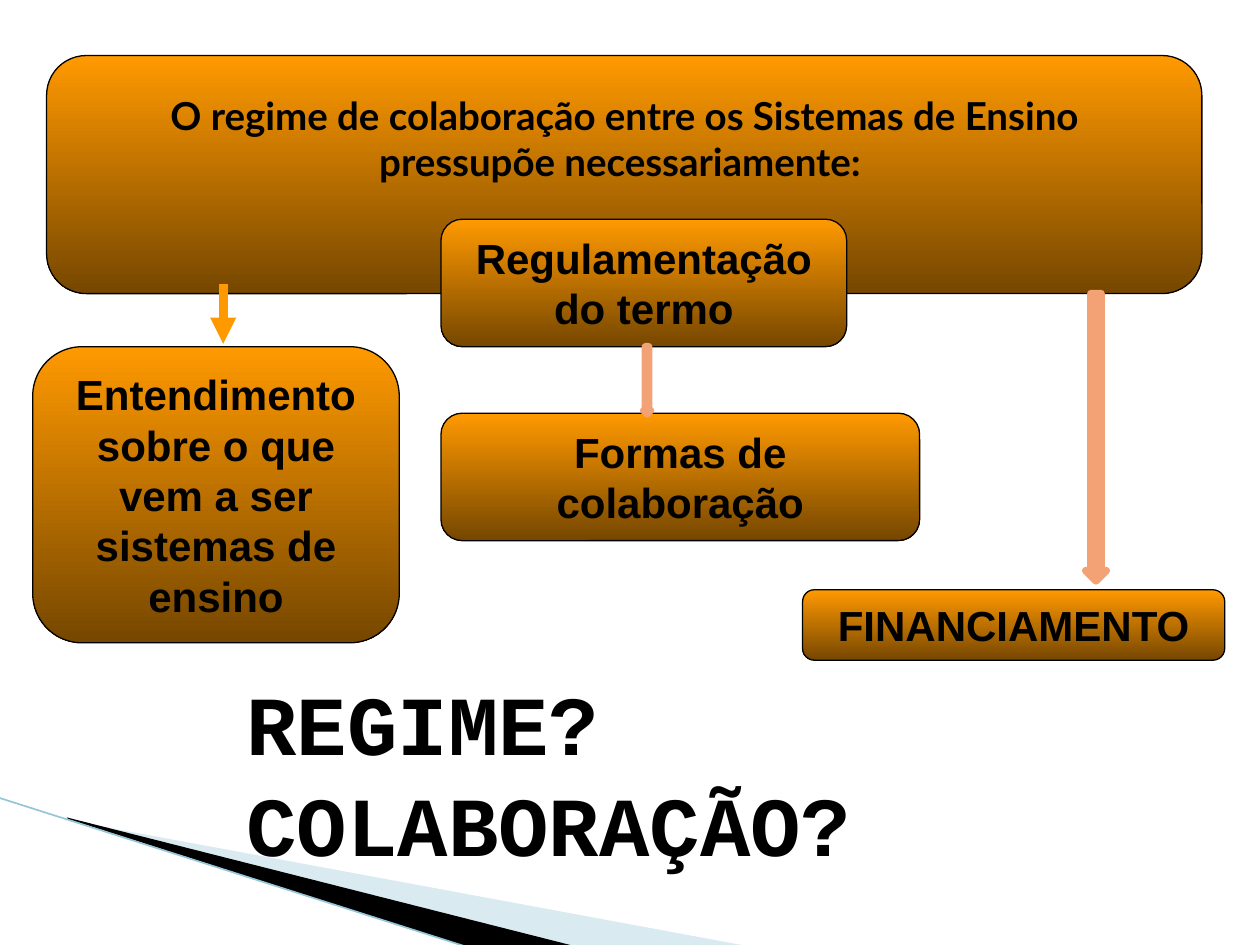
from lxml import etree
from pptx import Presentation
from pptx.dml.color import RGBColor
from pptx.enum import shapes, text
from pptx.oxml import ns
from pptx.util import Cm, Pt

ORANGE = RGBColor(0xFF, 0x99, 0x00)
BROWN = RGBColor(0x76, 0x47, 0x00)
BLACK = RGBColor(0x00, 0x00, 0x00)
SALMON = RGBColor(0xF3, 0xA2, 0x76)
PALE_BLUE = RGBColor(0xA0, 0xCB, 0xDC)
EDGE_BLUE = RGBColor(0x97, 0xC5, 0xD8)


def write(holder, words, font="Arial", size=24, align=text.PP_ALIGN.CENTER,
          anchor=text.MSO_ANCHOR.MIDDLE):
    frame = holder.text_frame
    frame.word_wrap = True
    frame.auto_size = text.MSO_AUTO_SIZE.SHAPE_TO_FIT_TEXT
    frame.vertical_anchor = anchor
    paragraph = frame.paragraphs[0]
    paragraph.alignment = align
    run = paragraph.add_run()
    run.text = words
    run.font.name = font
    run.font.size = Pt(size)
    run.font.bold = True
    run.font.color.rgb = BLACK


def draw_line(start, end, color, width):
    line = slide.shapes.add_connector(
        shapes.MSO_CONNECTOR.STRAIGHT, *map(Cm, start + end))
    line.line.color.rgb = color
    line.line.width = Pt(width)
    etree.SubElement(line._element.spPr, ns.qn("a:effectLst"))
    return line


prs = Presentation()
prs.slide_width, prs.slide_height = Cm(25.4), Cm(19.05)
slide = prs.slides.add_slide(prs.slide_layouts[6])

# Corner decoration: pale wedge, black wedge, thin edge
wedges = [
    ([(1.4, 16.54), (15.11, 19.08), (11.58, 19.08), (1.4, 16.51)], PALE_BLUE, 40),
    ([(1.35, 16.48), (11.61, 19.08), (9.45, 19.1), (1.37, 16.51)], BLACK, 100),
]
for corners, color, opacity in wedges:
    points = [(Cm(x), Cm(y)) for x, y in corners]
    outline = slide.shapes.build_freeform(*points[0])
    outline.add_line_segments(points[1:], close=True)
    wedge = outline.convert_to_shape()
    wedge.shadow.inherit = False
    wedge.fill.solid()
    wedge.fill.fore_color.rgb = color
    wedge.line.fill.background()
    if opacity < 100:
        tint = wedge._element.spPr.find(".//" + ns.qn("a:srgbClr"))
        etree.SubElement(tint, ns.qn("a:alpha"), val=str(opacity * 1000))
draw_line((-0.03, 16.08), (9.45, 19.1), EDGE_BLUE, 0.95)

# Premise panel, its heading and the four requirements
boxes = [
    ((0.94, 1.12, 23.29, 4.8), None),
    ((0.66, 6.99, 7.39, 5.97), "Entendimento sobre o que vem a ser sistemas de ensino"),
    ((8.89, 4.42, 8.18, 2.57), "Regulamentação do termo"),
    ((8.89, 8.33, 9.65, 2.57), "Formas de colaboração"),
    ((16.18, 11.89, 8.51, 1.42), "FINANCIAMENTO"),
]
for place, words in boxes:
    box = slide.shapes.add_shape(
        shapes.MSO_SHAPE.ROUNDED_RECTANGLE, *map(Cm, place))
    box.shadow.inherit = False
    box.fill.gradient()
    box.fill.gradient_angle = 270
    for stop, color, position in zip(box.fill.gradient_stops, (ORANGE, BROWN), (0, 1)):
        stop.color.rgb = color
        stop.position = position
    box.line.color.rgb = BLACK
    box.line.width = Pt(0.75)
    if words:
        write(box, words)
    else:
        premise = slide.shapes.add_textbox(Cm(1.7), Cm(1.73), Cm(21.79), Cm(2.13))
        write(premise, "O regime de colaboração entre os Sistemas de Ensino "
              "pressupõe necessariamente: ", font="Lato", size=22,
              anchor=text.MSO_ANCHOR.TOP)

# Arrows from the premise to the requirements
understanding_arrow = draw_line((4.5, 5.72), (4.5, 6.93), ORANGE, 5)
etree.SubElement(understanding_arrow.line._get_or_add_ln(),
                 ns.qn("a:tailEnd"), type="triangle")
for place in [(12.98, 6.99, 0.13, 1.35), (21.89, 5.92, 0.41, 5.79)]:
    arrow = slide.shapes.add_shape(shapes.MSO_SHAPE.DOWN_ARROW, *map(Cm, place))
    arrow.shadow.inherit = False
    arrow.fill.solid()
    arrow.fill.fore_color.rgb = SALMON
    arrow.line.color.rgb = SALMON
    arrow.line.width = Pt(4.33)

# Closing question
question = slide.shapes.add_textbox(Cm(4.72), Cm(13.41), Cm(18.01), Cm(4.37))
write(question, "REGIME? COLABORAÇÃO?", font="Courier New", size=48,
      align=text.PP_ALIGN.LEFT, anchor=text.MSO_ANCHOR.TOP)

prs.save("out.pptx")
